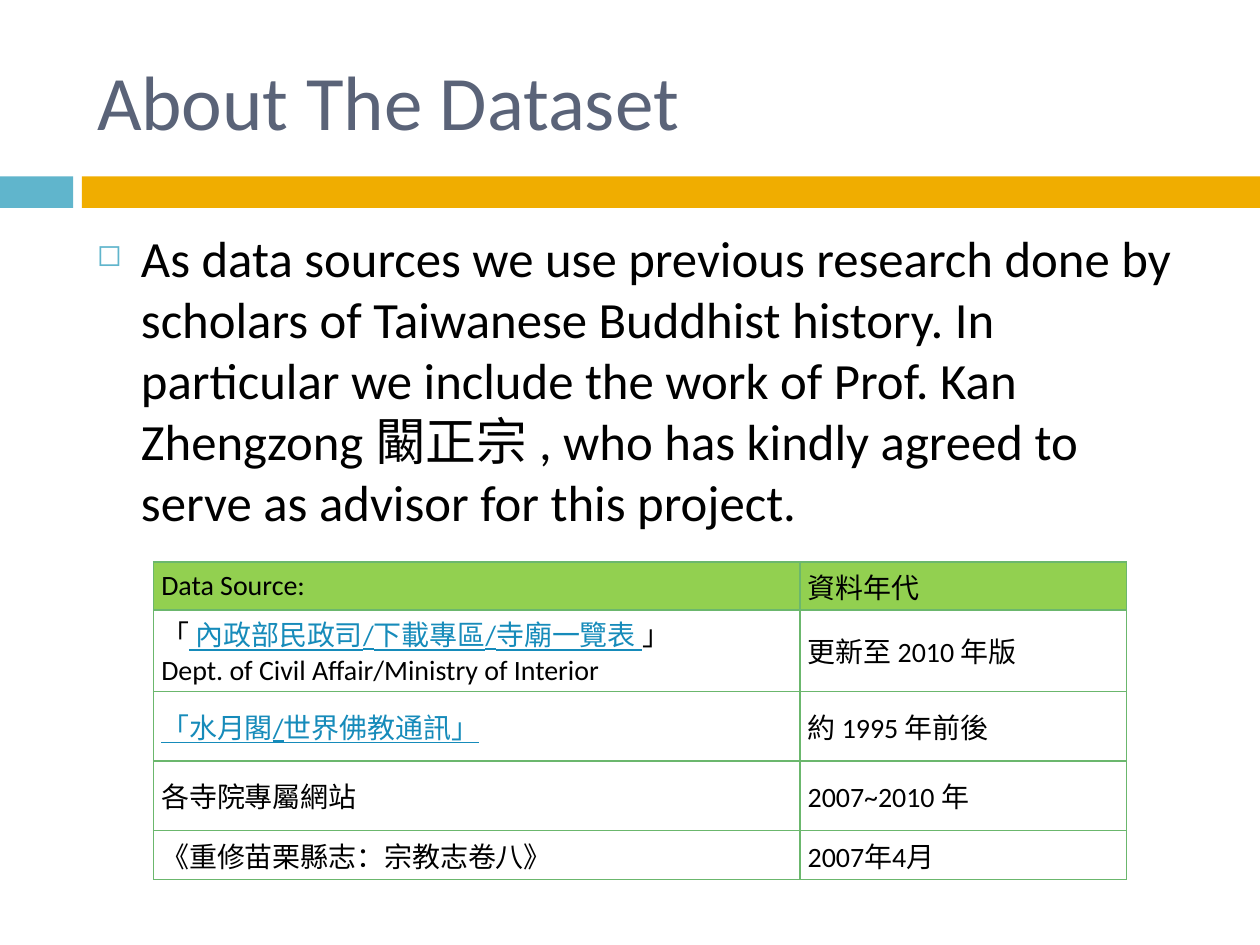
from lxml import etree
from pptx import Presentation
from pptx import util as u
from pptx.dml.color import RGBColor
from pptx.enum import shapes, text
from pptx.oxml.ns import qn

# Content
TITLE = "About The Dataset"
BODY = ("As data sources we use previous research done by scholars of Taiwanese "
        "Buddhist history. In particular we include the work of Prof. Kan Zhengzong "
        "闞正宗 , who has kindly agreed to serve as advisor for this project.")

# Each cell is a list of paragraphs, each paragraph a list of (text, style)
ROWS = [
    ([[("Data Source:", "plain")]], [[("資料年代", "plain")]]),
    ([[("「", "plain"), (" 內政部民政司/下載專區/寺廟一覽表 ", "marked"), ("」", "plain")],
      [("Dept. of Civil Affair/Ministry of Interior", "plain")]],
     [[("更新至 2010 年版", "plain")]]),
    ([[("「水月閣/世界佛教通訊」", "marked")]], [[("約 1995 年前後", "plain")]]),
    ([[("各寺院專屬網站", "plain")]], [[("2007~2010 年", "plain")]]),
    ([[("《重修苗栗縣志：宗教志卷八》", "plain")]], [[("2007年4月", "plain")]]),
]
COLUMN_WIDTHS = [5.13, 2.59]
ROW_HEIGHTS = [0.38, 0.65, 0.55, 0.55, 0.39]

COLORS = {"title": "5A6378", "text": "000000", "link": "168BBA", "blue": "60B5CC",
          "gold": "F0AD00", "header": "92D050", "border": "6BB76D"}
STYLES = {"plain": ("text", False), "marked": ("link", True)}
BANDS = [(0, 0.58, "blue"), (0.65, 9.35, "gold")]
LEFT, WIDTH = 0.67, 8.92


def inches(*values):
    return [u.Inches(value) for value in values]


def set_all(item, values):
    for name, value in values.items():
        setattr(item, name, value)


def add_span(para, words, size, color, underline=False):
    span = para.add_run()
    span.text = words
    set_all(span.font, {"name": "Calibri", "size": u.Pt(size), "underline": underline})
    span.font.color.rgb = RGBColor.from_string(COLORS[color])


def add_bullet(para, mark, color, percent, indent):
    props = para._p.get_or_add_pPr()
    props.set("marL", str(u.Inches(indent)))
    props.set("indent", str(-u.Inches(indent)))
    tint = etree.SubElement(props, qn("a:buClr"))
    etree.SubElement(tint, qn("a:srgbClr"), val=COLORS[color])
    etree.SubElement(props, qn("a:buSzPct"), val=str(percent * 1000))
    etree.SubElement(props, qn("a:buChar"), char=mark)


def add_borders(cell, color, points):
    props = cell._tc.get_or_add_tcPr()
    for side in ("a:lnL", "a:lnR", "a:lnT", "a:lnB"):
        line = etree.SubElement(props, qn(side), w=str(u.Pt(points)))
        paint = etree.SubElement(line, qn("a:solidFill"))
        etree.SubElement(paint, qn("a:srgbClr"), val=COLORS[color])


def fill_cell(cell, paragraphs, header):
    set_all(cell, {"vertical_anchor": text.MSO_ANCHOR.MIDDLE,
                   "margin_left": u.Inches(0.06), "margin_right": u.Inches(0.06),
                   "margin_top": u.Inches(0.03), "margin_bottom": u.Inches(0.03)})
    add_borders(cell, "border", 1)
    if header:
        cell.fill.solid()
        cell.fill.fore_color.rgb = RGBColor.from_string(COLORS["header"])
    else:
        cell.fill.background()
    frame = cell.text_frame
    for index, spans in enumerate(paragraphs):
        para = frame.add_paragraph() if index else frame.paragraphs[0]
        for words, style in spans:
            add_span(para, words, 16, *STYLES[style])


def main():
    deck = Presentation()
    set_all(deck, {"slide_width": u.Inches(10), "slide_height": u.Inches(7.5)})
    page = deck.slides.add_slide(deck.slide_layouts[5])

    # Two-colour band under the title
    for left, width, color in BANDS:
        band = page.shapes.add_shape(shapes.MSO_SHAPE.RECTANGLE,
                                     *inches(left, 1.4, width, 0.25))
        band.shadow.inherit = False
        band.fill.solid()
        band.fill.fore_color.rgb = RGBColor.from_string(COLORS[color])
        band.line.fill.background()

    # Title
    title = page.shapes.title
    set_all(title, dict(zip(("left", "top", "width", "height"),
                            inches(LEFT, 0.25, WIDTH, 1.08))))
    set_all(title.text_frame, {"vertical_anchor": text.MSO_ANCHOR.MIDDLE, "word_wrap": True})
    para = title.text_frame.paragraphs[0]
    para.alignment = text.PP_ALIGN.LEFT
    add_span(para, TITLE, 44, "title")

    # Body paragraph
    box = page.shapes.add_textbox(*inches(LEFT, 1.75, WIDTH, 2.6))
    box.text_frame.word_wrap = True
    para = box.text_frame.paragraphs[0]
    add_bullet(para, "◻", "blue", 60, 0.35)
    add_span(para, BODY, 29, "text")

    # Table of sources
    table = page.shapes.add_table(
        len(ROWS), len(COLUMN_WIDTHS),
        *inches(1.22, 4.46, sum(COLUMN_WIDTHS), sum(ROW_HEIGHTS))).table
    set_all(table, {"first_row": False, "horz_banding": False})
    for column, width in zip(table.columns, COLUMN_WIDTHS):
        column.width = u.Inches(width)
    for index, (row, height, cells) in enumerate(zip(table.rows, ROW_HEIGHTS, ROWS)):
        row.height = u.Inches(height)
        for cell, paragraphs in zip(row.cells, cells):
            fill_cell(cell, paragraphs, header=index == 0)

    deck.save("out.pptx")


if __name__ == "__main__":
    main()
